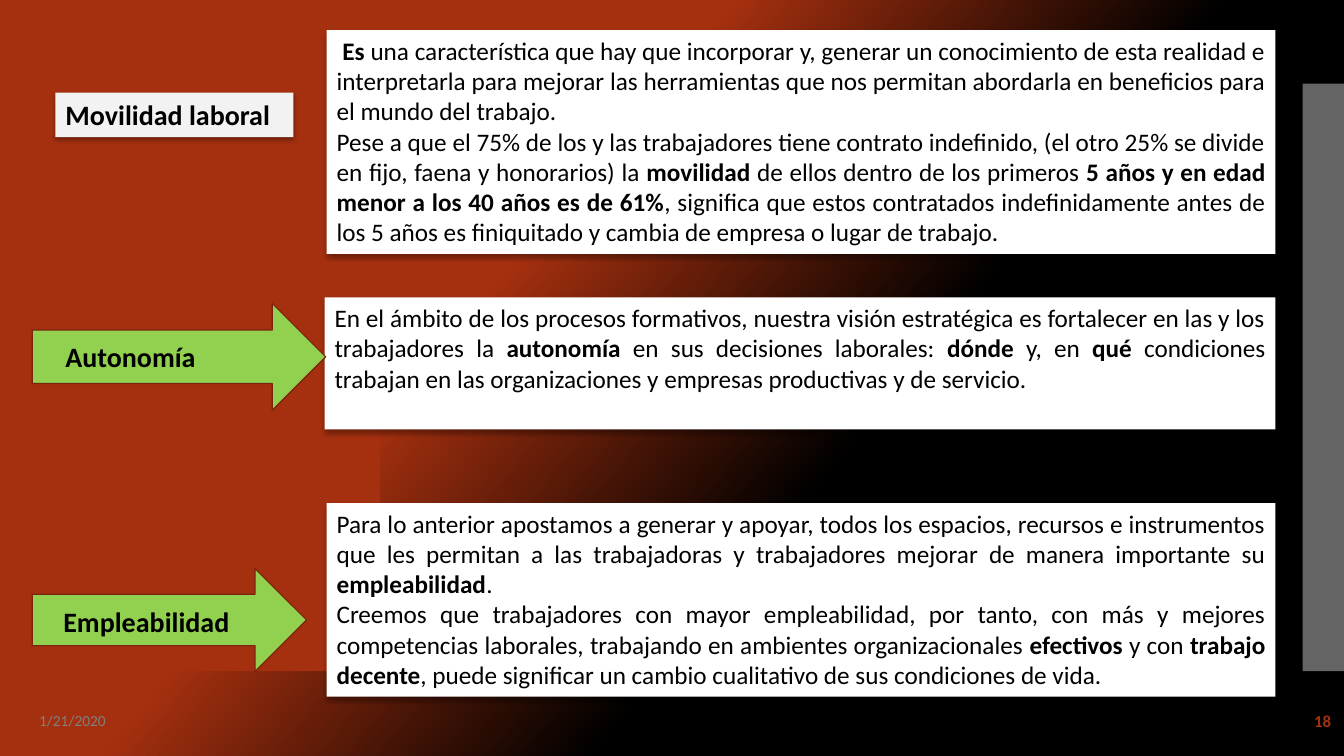
from lxml import etree
from pptx import Presentation
from pptx.dml.color import RGBColor
from pptx.enum import shapes, text
from pptx.oxml import ns
from pptx.util import Inches, Pt

RUST = RGBColor(0xA5, 0x30, 0x0F)
DARK_RUST = RGBColor(0x7A, 0x24, 0x0B)
BLACK = RGBColor(0, 0, 0)
WHITE = RGBColor(0xFF, 0xFF, 0xFF)
PALE_GREY = RGBColor(0xF2, 0xF2, 0xF2)
SIDE_GREY = RGBColor(0xC8, 0xC8, 0xC8)
DATE_GREY = RGBColor(0x80, 0x80, 0x80)
GREEN = RGBColor(0x92, 0xD0, 0x50)

LEFT, RIGHT, JUSTIFY = text.PP_ALIGN.LEFT, text.PP_ALIGN.RIGHT, text.PP_ALIGN.JUSTIFY


def add_block(kind, box, fill, shadow=False):
    """Filled shape without outline, with an optional soft shadow below."""
    block = slide.shapes.add_shape(kind, *map(Inches, box))
    block.fill.solid()
    block.fill.fore_color.rgb = fill
    block.line.fill.background()
    block.shadow.inherit = False
    if shadow:
        effects = block._element.spPr.find(ns.qn("a:effectLst"))
        outer = etree.SubElement(effects, ns.qn("a:outerShdw"), blurRad=str(Pt(3.5)),
                                 dist=str(Pt(2.2)), dir="5400000", rotWithShape="0")
        black = etree.SubElement(outer, ns.qn("a:srgbClr"), val="000000")
        etree.SubElement(black, ns.qn("a:alpha"), val="32000")
    return block


def write(holder, paragraphs, size, color=BLACK, align=LEFT, anchor=text.MSO_ANCHOR.TOP):
    """Fill a shape with paragraphs; words between ** marks are bold."""
    frame = holder.text_frame
    frame.word_wrap = True
    frame.vertical_anchor = anchor
    for i, wording in enumerate(paragraphs):
        paragraph = frame.paragraphs[0] if i == 0 else frame.add_paragraph()
        paragraph.alignment = align
        for j, part in enumerate(wording.split("**")):
            if part:
                run = paragraph.add_run()
                run.text = part
                run.font.name = "Calibri"
                run.font.size = Pt(size)
                run.font.bold = j % 2 == 1
                run.font.color.rgb = color


deck = Presentation()
deck.slide_width, deck.slide_height = Inches(13.33), Inches(7.5)
slide = deck.slides.add_slide(deck.slide_layouts[6])

# Background gradient, running down to the right
backdrop = slide.background.fill
backdrop.gradient()
backdrop.gradient_angle = 320
for stop, position, color in zip(backdrop.gradient_stops, (0.37, 0.62), (RUST, BLACK)):
    stop.position = position
    stop.color.rgb = color

# Side bands
RECT = shapes.MSO_SHAPE.RECTANGLE
add_block(RECT, (0, 0.83, 3.77, 5.83), RUST)
side_band = add_block(RECT, (12.92, 0.83, 0.42, 5.83), SIDE_GREY)
side_color = side_band._element.spPr.find(".//" + ns.qn("a:srgbClr"))
etree.SubElement(side_color, ns.qn("a:alpha"), val="50000")

# Explanations
explanations = [
    ((3.24, 0.3, 9.41, 2.22), [
        "** Es **una característica que hay que incorporar y, generar un conocimiento de esta "
        "realidad e interpretarla para mejorar las herramientas que nos permitan abordarla en "
        "beneficios para el mundo del trabajo.",
        "Pese a que el 75% de los y las trabajadores tiene contrato indefinido, (el otro 25% se "
        "divide en fijo, faena y honorarios) la **movilidad** de ellos dentro de los primeros "
        "**5 años y en edad menor a los 40 años es de 61%**, significa que estos contratados "
        "indefinidamente antes de los 5 años es finiquitado y cambia de empresa o lugar de "
        "trabajo. "]),
    ((3.22, 2.95, 9.43, 1.31), [
        "En el ámbito de los procesos formativos, nuestra visión estratégica es fortalecer en "
        "las y los trabajadores la **autonomía** en sus decisiones laborales: **dónde** y, en "
        "**qué** condiciones trabajan en las organizaciones y empresas productivas y de "
        "servicio."]),
    ((3.24, 4.99, 9.41, 1.92), [
        "Para lo anterior apostamos a generar y apoyar, todos los espacios, recursos e "
        "instrumentos que les permitan a las trabajadoras y trabajadores mejorar de manera "
        "importante su **empleabilidad**.",
        "Creemos que trabajadores con mayor empleabilidad, por tanto, con más y mejores "
        "competencias laborales, trabajando en ambientes organizacionales **efectivos** y con "
        "**trabajo decente**, puede significar un cambio cualitativo de sus condiciones de "
        "vida. "]),
]
for box, paragraphs in explanations:
    write(add_block(RECT, box, WHITE, shadow=True), paragraphs, 18, align=JUSTIFY)

# Topic label
mobility = add_block(RECT, (0.55, 0.92, 2.36, 0.44), PALE_GREY, shadow=True)
write(mobility, ["**Movilidad laboral**"], 20)

# Topic arrows with their labels
topics = [
    ("Autonomía", (0.32, 3.01, 2.91, 1.06), (0.55, 3.32, 2.05, 0.44)),
    ("Empleabilidad", (0.32, 5.64, 2.72, 1.02), (0.53, 5.95, 1.97, 0.44)),
]
for topic, arrow_box, label_box in topics:
    arrow = add_block(shapes.MSO_SHAPE.RIGHT_ARROW, arrow_box, GREEN)
    arrow.line.color.rgb = DARK_RUST
    arrow.line.width = Pt(0.85)
    label = slide.shapes.add_textbox(*map(Inches, label_box))
    write(label, [f"**{topic}**"], 20)

# Footer: date and slide number
footer = [
    ("1/21/2020", (0.29, 6.95, 3, 0.4), 11, DATE_GREY, LEFT),
    ("**18**", (11.63, 6.95, 1.67, 0.4), 12, RUST, RIGHT),
]
for wording, box, size, color, align in footer:
    note = slide.shapes.add_textbox(*map(Inches, box))
    write(note, [wording], size, color, align, text.MSO_ANCHOR.MIDDLE)

deck.save("out.pptx")
